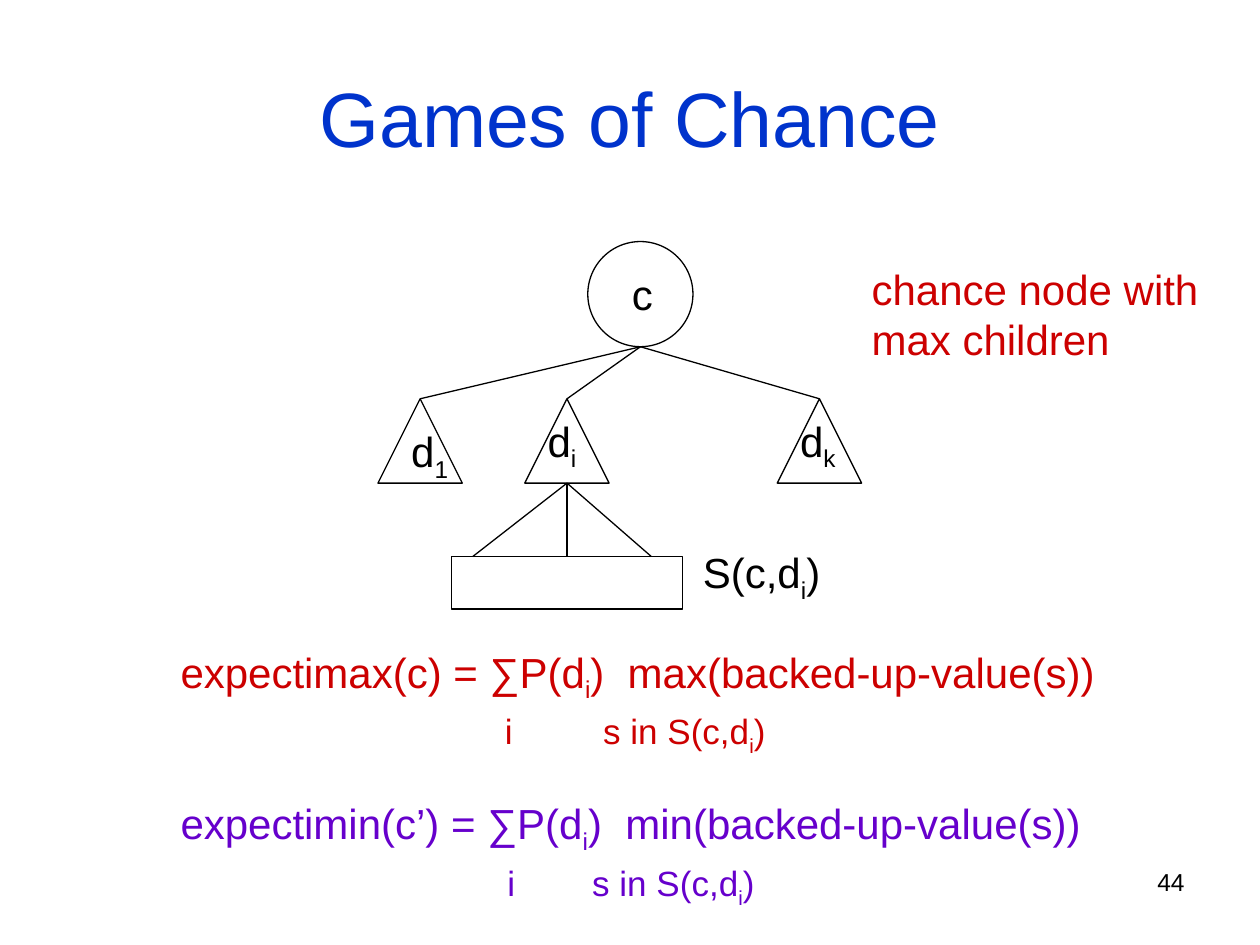
from lxml import etree
from pptx import Presentation
from pptx.dml.color import RGBColor
from pptx.enum import shapes as kinds, text as txt
from pptx.oxml import ns
from pptx.util import Cm, Pt

HUES = {"ink": "000000", "title": "0033CC", "max": "CC0000", "min": "6600CC"}
FONT = "Arial"


def style(run, size, hue):
    run.font.name = FONT
    run.font.size = Pt(size)
    run.font.color.rgb = RGBColor.from_string(HUES[hue])


def write(par, line, size, hue):
    """Fill a paragraph; every second part between bars is a subscript."""
    for n, part in enumerate(line.split("|")):
        run = par.add_run()
        run.text = part
        style(run, size, hue)
        if n % 2:
            run._r.get_or_add_rPr().set("baseline", "-25000")


def label(slide, box, lines, hue="ink", size=24):
    """Add a text box and return its paragraphs."""
    frame = slide.shapes.add_textbox(*map(Cm, box)).text_frame
    frame.word_wrap = True
    frame.auto_size = txt.MSO_AUTO_SIZE.SHAPE_TO_FIT_TEXT
    for n, line in enumerate(lines):
        par = frame.add_paragraph() if n else frame.paragraphs[0]
        write(par, line, size, hue)
    return frame.paragraphs


def node(slide, kind, box):
    shape = slide.shapes.add_shape(kind, *map(Cm, box))
    shape.shadow.inherit = False
    shape.fill.background()
    shape.line.color.rgb = RGBColor.from_string(HUES["ink"])
    shape.line.width = Pt(0.75)
    return shape


def edge(slide, start, end):
    line = slide.shapes.add_connector(
        kinds.MSO_CONNECTOR.STRAIGHT, *map(Cm, start + end))
    line.line.color.rgb = RGBColor.from_string(HUES["ink"])
    line.line.width = Pt(0.75)
    etree.SubElement(line._element.spPr, ns.qn("a:effectLst"))
    return line


def title(slide, box, words):
    shape = slide.shapes.title
    shape.left, shape.top, shape.width, shape.height = map(Cm, box)
    frame = shape.text_frame
    frame.text = words
    frame.vertical_anchor = txt.MSO_ANCHOR.MIDDLE
    par = frame.paragraphs[0]
    par.alignment = txt.PP_ALIGN.CENTER
    style(par.runs[0], 44, "title")


def tree(slide, left, top):
    """Draw the chance node, its children and the state set."""
    form = kinds.MSO_SHAPE
    disc, side = 2.12, 1.7
    root = (left + 5.29, top + disc)
    row = top + 3.17
    node(slide, form.OVAL, (root[0] - disc / 2, top, disc, disc))
    label(slide, (left + 4.87, top + 0.42, 0.95, 1.27), ["c"])

    # offset of each child, then the offset and height of its label
    kids = {"d|1": (0, 0.42, 0.42), "d|i": (2.96, 0.21, 0.21),
            "d|k": (8.05, 0.21, 0.21)}
    for name, (x, dx, dy) in kids.items():
        x += left
        node(slide, form.ISOSCELES_TRIANGLE, (x, row, side, side))
        label(slide, (x + dx, row + dy, 1.3, 1.27), [name])
        edge(slide, root, (x + side / 2, row))

    base = (left + 2.96 + side / 2, row + side)
    low = top + 6.35
    states = node(slide, form.RECTANGLE, (base[0] - 2.33, low, 4.66, 1.06))
    for dx in (-1.9, 0, 1.7):
        line = edge(slide, base, (base[0] + dx, low))
        if dx == 0:
            line.end_connect(states, 0)
    label(slide, (left + 6.3, low - 0.32, 2.95, 1.27), ["S(c,d|i|)"])


def rules(slide, box):
    """Write both formulas, each with its index line below on tab stops."""
    lines = ["expectimax(c) = ∑P(d|i|)  max(backed-up-value(s))",
             "\ti\ts in S(c,d|i|)",
             "expectimin(c’) = ∑P(d|i|)  min(backed-up-value(s))",
             "\ti\ts in S(c,d|i|)"]
    pars = label(slide, box, lines, "max")
    pars[2].space_before = Pt(23)
    for par in pars[2:]:
        for run in par.runs:
            run.font.color.rgb = RGBColor.from_string(HUES["min"])
    for par, stops in ((pars[1], (6.54, 8.52)), (pars[3], (6.59, 8.3))):
        par.space_before = Pt(3.6)
        for run in par.runs:
            run.font.size = Pt(20)
        tabs = etree.SubElement(par._p.get_or_add_pPr(), ns.qn("a:tabLst"))
        for stop in stops:
            etree.SubElement(tabs, ns.qn("a:tab"), pos=str(Cm(stop)), algn="l")


def main():
    deck = Presentation()
    deck.slide_width, deck.slide_height = Cm(25.4), Cm(19.05)
    slide = deck.slides.add_slide(deck.slide_layouts[5])
    title(slide, (1.27, 0.76, 22.86, 3.18), "Games of Chance")
    tree(slide, 7.62, 4.87)
    label(slide, (17.32, 5.18, 7.3, 2.29),
          ["chance node with", "max children"], "max")
    rules(slide, (3.39, 12.9, 19.2, 5.16))
    page = label(slide, (18.21, 17.35, 5.92, 1.32), ["44"], size=14)
    page[0].alignment = txt.PP_ALIGN.RIGHT
    deck.save("out.pptx")


if __name__ == "__main__":
    main()
